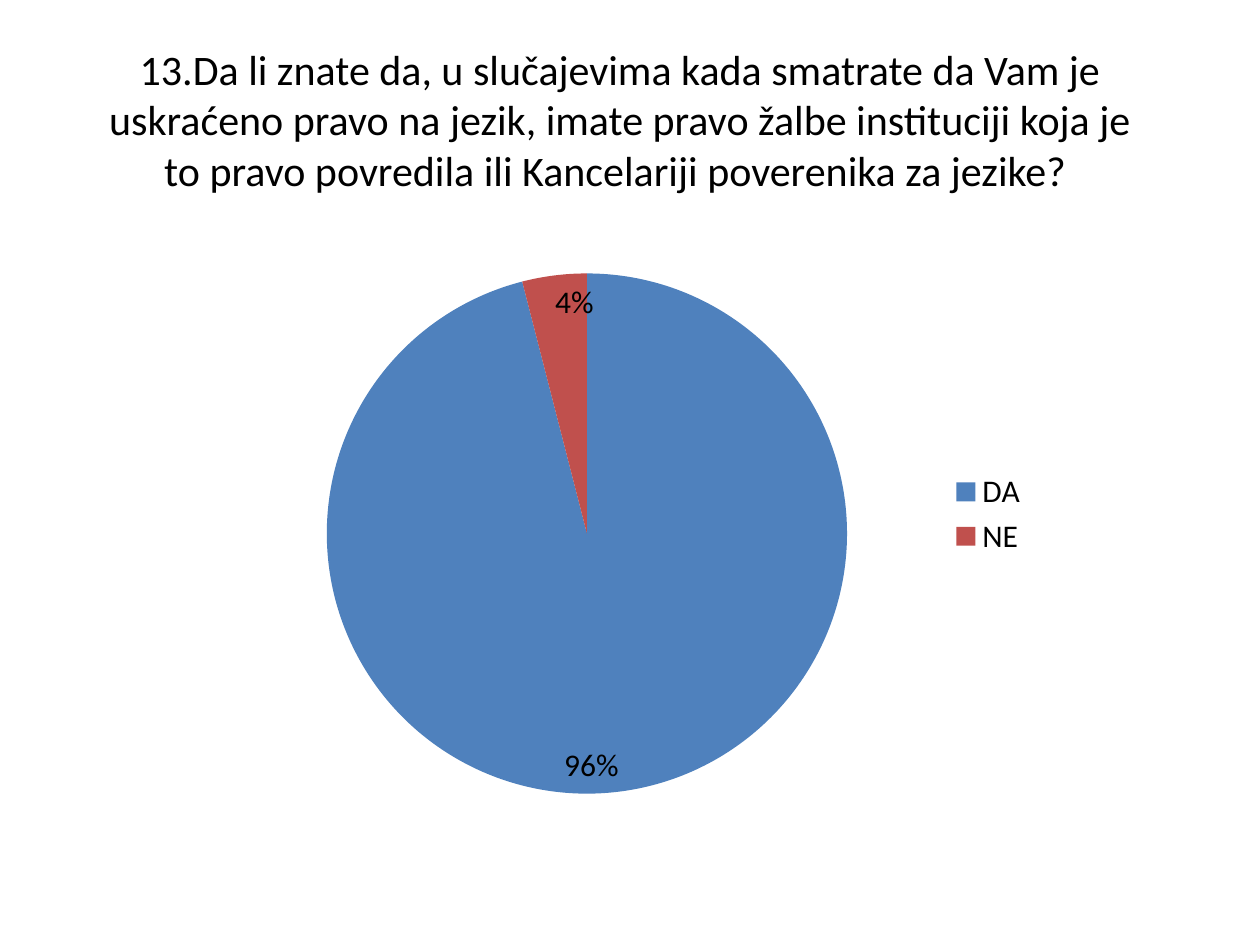
from dataclasses import dataclass

from lxml import etree
from pptx import Presentation
from pptx import util as u
from pptx.chart.data import CategoryChartData
from pptx.dml.color import RGBColor
from pptx.enum import chart as ch, text
from pptx.oxml.ns import qn

COLORS = {"text": "000000", "yes": "4F81BD", "no": "C0504D"}
FONT = "Calibri"
QUESTION = (
    "13.Da li znate da, u slučajevima kada smatrate da Vam je uskraćeno "
    "pravo na jezik, imate pravo žalbe instituciji koja je to pravo "
    "povredila ili Kancelariji poverenika za jezike? "
)


@dataclass
class Answer:
    label: str
    percent: int
    color: str


ANSWERS = [Answer("DA", 96, "yes"), Answer("NE", 4, "no")]


def style_font(font, size: int) -> None:
    font.name = FONT
    font.size = u.Pt(size)
    font.color.rgb = RGBColor.from_string(COLORS["text"])


def add_question(slide, wording: str) -> None:
    question = slide.shapes.title
    question.left, question.top = u.Inches(0.59), u.Inches(0.29)
    question.width, question.height = u.Inches(8.66), u.Inches(1.31)
    frame = question.text_frame
    frame.text = wording
    frame.word_wrap = True
    frame.auto_size = text.MSO_AUTO_SIZE.NONE
    frame.vertical_anchor = text.MSO_ANCHOR.MIDDLE
    paragraph = frame.paragraphs[0]
    paragraph.alignment = text.PP_ALIGN.CENTER
    style_font(paragraph.runs[0].font, 24)


def place_plot(pie, x: float, y: float, w: float, h: float) -> None:
    plot_area = pie.plots[0]._element.getparent()
    for old in plot_area.findall(qn("c:layout")):
        plot_area.remove(old)
    layout = etree.Element(qn("c:layout"))
    manual = etree.SubElement(layout, qn("c:manualLayout"))
    settings = {"layoutTarget": "inner", "xMode": "edge", "yMode": "edge",
                "x": x, "y": y, "w": w, "h": h}
    for tag, value in settings.items():
        etree.SubElement(manual, qn(f"c:{tag}")).set("val", str(value))
    plot_area.insert(0, layout)


def add_answer_pie(slide, answers: list[Answer]) -> None:
    shares = CategoryChartData()
    shares.categories = [answer.label for answer in answers]
    shares.add_series("Series 1", [answer.percent for answer in answers])
    pie = slide.shapes.add_chart(
        ch.XL_CHART_TYPE.PIE, u.Inches(1.59), u.Inches(1.86),
        u.Inches(6.67), u.Inches(4.44), shares).chart
    style_font(pie.font, 18)
    pie.has_title = False
    pie.has_legend = True
    pie.legend.position = ch.XL_LEGEND_POSITION.RIGHT
    pie.legend.include_in_layout = False

    plot = pie.plots[0]
    plot.vary_by_categories = True
    for index, answer in enumerate(answers):
        fill = plot.series[0].points[index].format.fill
        fill.solid()
        fill.fore_color.rgb = RGBColor.from_string(COLORS[answer.color])

    plot.has_data_labels = True
    labels = plot.data_labels
    labels.show_percentage = True
    labels.show_value = False
    labels.number_format = "0%"
    labels.number_format_is_linked = False
    labels.position = ch.XL_LABEL_POSITION.INSIDE_END
    style_font(labels.font, 18)
    place_plot(pie, 0.04, 0.07, 0.84, 0.93)


def main() -> None:
    deck = Presentation()
    deck.slide_width, deck.slide_height = u.Inches(10), u.Inches(7.5)
    slide = deck.slides.add_slide(deck.slide_layouts.get_by_name("Title Only"))
    add_question(slide, QUESTION)
    add_answer_pie(slide, ANSWERS)
    deck.save("out.pptx")


if __name__ == "__main__":
    main()
